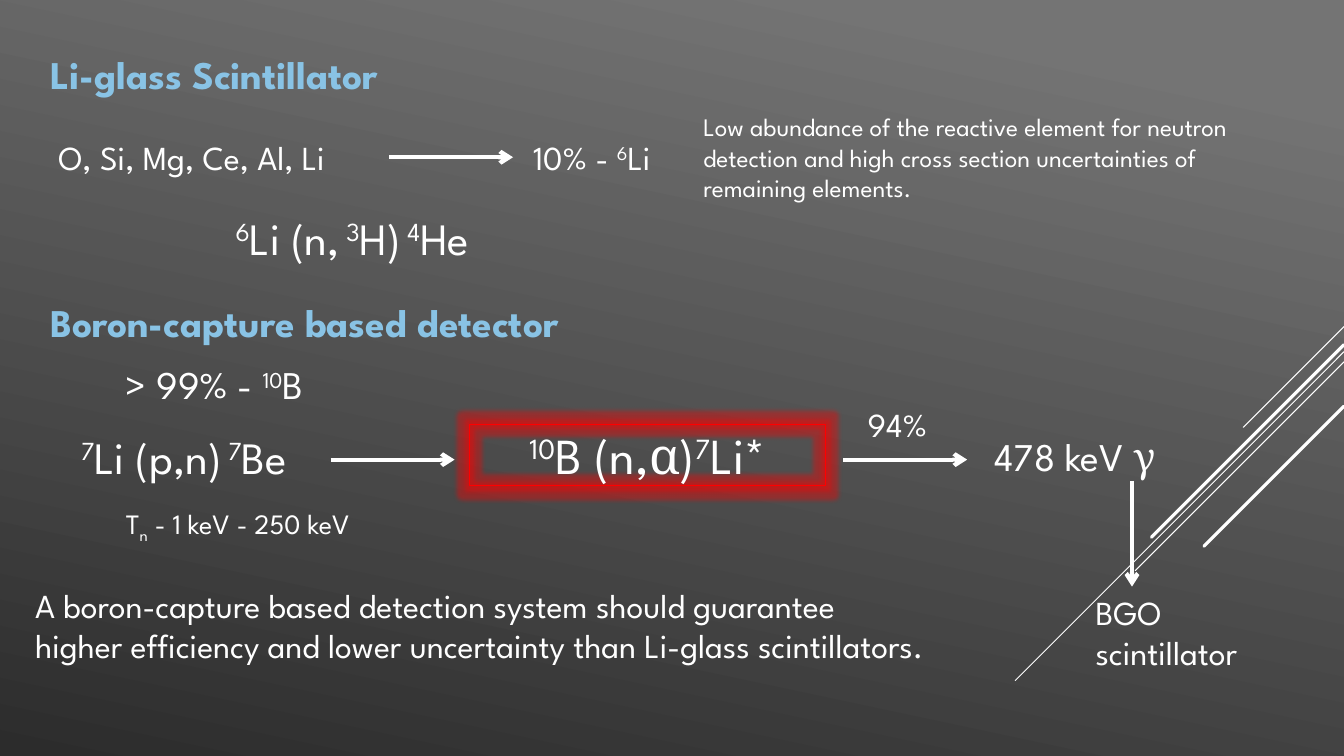
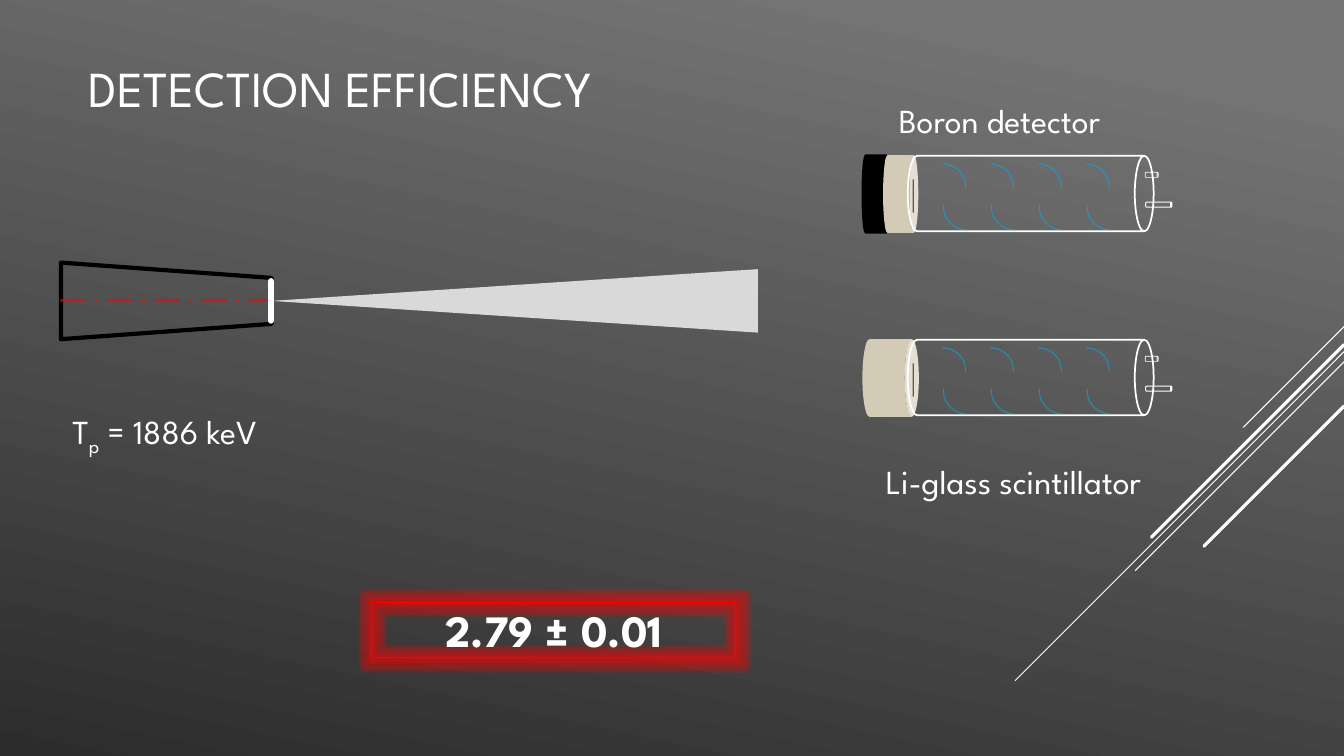
from pptx import Presentation
from pptx.dml.color import RGBColor
from pptx.enum.dml import MSO_LINE
from pptx.enum.shapes import MSO_CONNECTOR, MSO_SHAPE
from pptx.enum.text import MSO_ANCHOR, MSO_AUTO_SIZE, PP_ALIGN
from pptx.oxml.ns import qn
from pptx.util import Inches, Pt
from lxml import etree

STRAIGHT = MSO_CONNECTOR.STRAIGHT
RECT, CAN, ARC = MSO_SHAPE.RECTANGLE, MSO_SHAPE.CAN, MSO_SHAPE.ARC
PIPE, CONE = MSO_SHAPE.FLOWCHART_MANUAL_OPERATION, MSO_SHAPE.FLOWCHART_EXTRACT
DASH_DOT = MSO_LINE.LONG_DASH_DOT
TOP, MIDDLE = MSO_ANCHOR.TOP, MSO_ANCHOR.MIDDLE
LEFT, CENTER = PP_ALIGN.LEFT, PP_ALIGN.CENTER
GROW = MSO_AUTO_SIZE.SHAPE_TO_FIT_TEXT

COLS, ROWS = 133.33, 75
CELL = 0.1
FONT, GREEK_FONT = "League Spartan", "Cambria"
BASELINES = {"^": "30000", "_": "-25000"}
GREEK = "~"
COLORS = {
    "light": "747474", "dark": "2C2C2C", "text": "FFFFFF", "heading": "89C3E5",
    "glow": "FF0000", "black": "000000", "beam": "D9D9D9", "crystal": "D3CBB6",
    "dynode": "00B0F0",
}


def grid(*cells):
    return [Inches(c * CELL) for c in cells]


def rgb(name):
    return RGBColor.from_string(COLORS[name])


def add_alpha(parent, percent):
    color = next(parent.iter(qn("a:srgbClr")))
    etree.SubElement(color, qn("a:alpha"), val=str(percent * 1000))


def style_line(sp, color, weight, alpha=100):
    if color is None:
        sp.line.fill.background()
        return
    sp.line.color.rgb = rgb(color)
    sp.line.width = Pt(weight)
    if alpha < 100:
        add_alpha(sp._element.spPr.get_or_add_ln(), alpha)


def line(s, x1, y1, x2, y2, color="text", weight=0.75, alpha=100,
         dash=None, arrow=False, cap="flat"):
    c = s.shapes.add_connector(STRAIGHT, *grid(x1, y1, x2, y2))
    style_line(c, color, weight, alpha)
    if dash:
        c.line.dash_style = dash
    spPr = c._element.spPr
    ln = spPr.get_or_add_ln()
    ln.set("cap", cap)
    if arrow:
        etree.SubElement(ln, qn("a:tailEnd"), type="arrow")
    etree.SubElement(spPr, qn("a:effectLst"))


def arrow(s, x1, y1, x2, y2):
    line(s, x1, y1, x2, y2, weight=3, arrow=True)


def shape(s, kind, x, y, w, h, fill=None, color=None, weight=0.75,
          alpha=100, rot=0):
    if rot in (90, 270):
        x, y, w, h = x + (w - h) / 2, y + (h - w) / 2, h, w
    sp = s.shapes.add_shape(kind, *grid(x, y, w, h))
    sp.rotation = rot
    sp.shadow.inherit = False
    if fill:
        sp.fill.solid()
        sp.fill.fore_color.rgb = rgb(fill)
    else:
        sp.fill.background()
    style_line(sp, color, weight, alpha)
    return sp


def write(sp, parts, size, color="text", bold=False, align=LEFT, anchor=TOP):
    tf = sp.text_frame
    tf.word_wrap = True
    tf.vertical_anchor = anchor
    p = tf.paragraphs[0]
    p.alignment = align
    p.font.name, p.font.size, p.font.bold = FONT, Pt(size), bold
    p.font.color.rgb = rgb(color)
    for part in parts:
        mark = part[0] if part[0] in BASELINES or part[0] == GREEK else ""
        r = p.add_run()
        r.text = part[len(mark):]
        if mark == GREEK:
            r.font.name = GREEK_FONT
        elif mark:
            r._r.get_or_add_rPr().set("baseline", BASELINES[mark])
    return tf


def text(s, x, y, w, h, *parts, size=24, **style):
    tb = s.shapes.add_textbox(*grid(x, y, w, h))
    write(tb, parts, size, **style).auto_size = GROW


def heading(s, y, w, words):
    text(s, 4, y, w, 5.7, words, size=28, color="heading", bold=True)


def glow_box(s, x, y, w, h, *parts, size, bold=False):
    sp = shape(s, RECT, x, y, w, h, color="glow")
    effects = sp._element.spPr.find(qn("a:effectLst"))
    glow = etree.SubElement(effects, qn("a:glow"), rad=str(Pt(6)))
    etree.SubElement(glow, qn("a:srgbClr"), val=COLORS["glow"])
    add_alpha(glow, 40)
    tf = write(sp, parts, size, bold=bold, align=CENTER)
    tf.margin_left = tf.margin_right = tf.margin_top = tf.margin_bottom = 0
    tf.auto_size = GROW


def new_slide(prs):
    s = prs.slides.add_slide(prs.slide_layouts[6])
    fill = s.background.fill
    fill.gradient()
    fill.gradient_angle = 360 - 102
    for stop, position, name in zip(fill.gradient_stops, (0.1, 1), ("light", "dark")):
        stop.position = position
        stop.color.rgb = rgb(name)
    for y, run, weight in ((32.4, 10, 0.75), (34.9, 32.6, 0.75), (35.9, 20.7, 0.75),
                           (34.2, 19.1, 2.25), (40.3, 13.9, 2.25)):
        line(s, COLS, y, COLS - run, y + run, weight=weight, cap="rnd")
    return s


def dynode(s, x, y, rot=0):
    sp = shape(s, ARC, x, y, 4.6, 4.5, color="dynode", alpha=60, rot=rot)
    sp.adjustments[0], sp.adjustments[1] = 162, 3.04


def detector(s, axis, caps):
    for x, w, fill, edge in caps:
        shape(s, CAN, x, axis - 3.8, w, 7.7, fill, edge, 1.25, rot=90)
    shape(s, CAN, 90.05, axis - 3.75, 24.4, 7.5, color="text", weight=1.25, rot=90)
    line(s, 90.6, axis - 1.4, 90.6, axis + 1.9, "black", alpha=60)
    for i in range(4):
        dynode(s, 91.2 + 4.75 * i, axis - 2.95)
        dynode(s, 93.6 + 4.75 * i, axis - 0.9, rot=180)
    shape(s, CAN, 113.65, axis + 0.85, 2.6, 0.5, color="text", rot=90)
    shape(s, CAN, 113.6, axis - 2.1, 1.3, 0.5, color="text", weight=0.5, rot=90)


def detector_choice(prs):
    s = new_slide(prs)
    heading(s, 4.5, 38.8, "Li-glass Scintillator")
    text(s, 4.8, 13.1, 33.8, 5, "O, Si, Mg, Ce, Al, Li")
    arrow(s, 38.6, 15.6, 50.9, 15.6)
    text(s, 51.9, 13.1, 15.3, 5, "10% - ", "^6", "Li")
    text(s, 68.8, 10.6, 57.8, 10.1,
         "Low abundance of the reactive element for neutron detection and "
         "high cross section uncertainties of remaining elements.", size=18)
    text(s, 19.2, 20.4, 31.5, 6.4, "^6", "Li (n,", "^ 3", "H)", "^ 4", "He",
         size=32, align=CENTER)

    heading(s, 29.1, 60.3, "Boron-capture based detector")
    text(s, 11.5, 35.3, 23.9, 5.7, "> 99% - ", "^10", "B", size=28)
    text(s, 2.5, 42.1, 31.5, 6.4, "^7", "Li (p,n)", "^ 7", "Be",
         size=32, align=CENTER)
    text(s, 11.5, 49.8, 28.7, 4.4, "T", "_n", " - 1 keV - 250 keV", size=20)
    glow_box(s, 46.6, 42.1, 35.3, 6.1, "^10", "B (n,", "~α", ")", "^7", "Li*", size=36)
    for x in (32.8, 83.65):
        arrow(s, x, 45.6, x + 12.3, 45.6)
    text(s, 85.1, 39.6, 9.4, 5, "94%")
    text(s, 97.7, 42.4, 26.5, 5.7, "478 keV ", "~γ", size=28)
    arrow(s, 112.3, 47.7, 112.3, 58.2)
    text(s, 107.7, 58.2, 22.5, 9.1, "BGO scintillator")
    text(s, 2.5, 57.5, 90.4, 13.1,
         "A boron-capture based detection system should guarantee higher "
         "efficiency and lower uncertainty than Li-glass scintillators.")


def detection_efficiency(prs):
    s = new_slide(prs)
    text(s, 7.8, 4.8, 75.9, 7.7, "DETECTION EFFICIENCY", size=36, anchor=MIDDLE)
    shape(s, PIPE, 6.05, 26.05, 20.9, 7.6, color="black", weight=3, rot=270)
    line(s, 6, 29.8, 26.9, 29.8, "glow", 2.25, alpha=60, dash=DASH_DOT)
    shape(s, CONE, 26.9, 26.7, 48.3, 6.3, "beam", rot=270)
    line(s, 26.9, 27.9, 26.9, 31.8, weight=4.5, cap="rnd")
    text(s, 6.2, 40.3, 32.2, 5, "T", "_p", " = 1886 keV")

    text(s, 88.2, 9.4, 30.6, 5, "Boron detector")
    detector(s, 19.2, [(85.55, 2.7, "black", "black"), (87.6, 3.5, "crystal", None)])
    detector(s, 37.45, [(85.55, 5.6, "crystal", None)])
    text(s, 86.9, 45.2, 30.6, 5, "Li-glass scintillator")

    glow_box(s, 36.9, 59.8, 36.1, 5.4, "2.79 ± 0.01", size=32, bold=True)


def main():
    prs = Presentation()
    prs.slide_width, prs.slide_height = grid(COLS, ROWS)
    detector_choice(prs)
    detection_efficiency(prs)
    prs.save("out.pptx")


if __name__ == "__main__":
    main()
